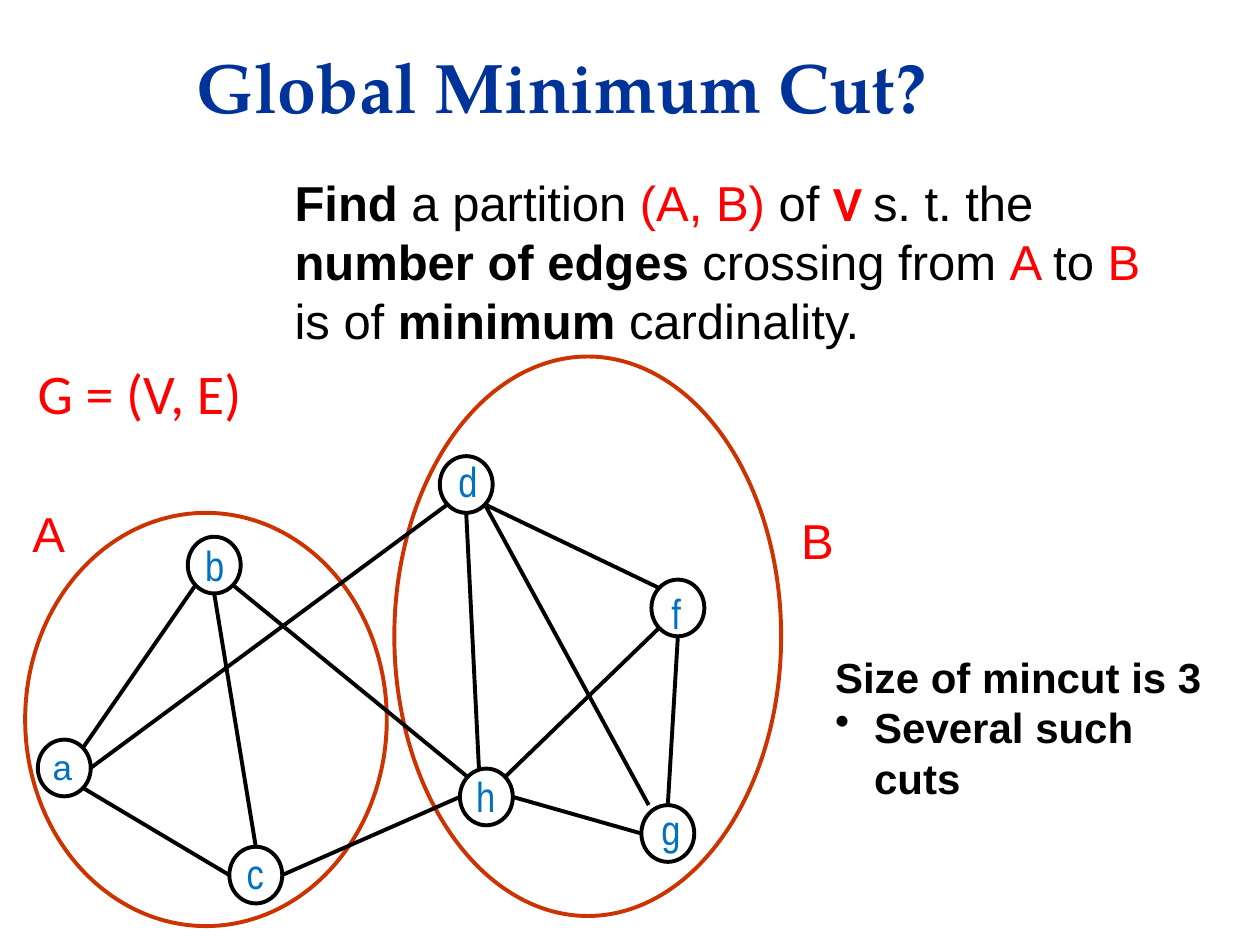
import pptx
import pptx.dml.color
import pptx.enum.shapes
import pptx.enum.text
import pptx.oxml
import pptx.util
from pptx.util import Inches

BLACK, RED, BLUE, NAVY, RUST = "000000", "FF0000", "0070C0", "003399", "CC3300"
NODE_WIDTH, NODE_HEIGHT = 0.42, 0.45

deck = pptx.Presentation()
deck.slide_width, deck.slide_height = Inches(10), Inches(7.5)
slide = deck.slides.add_slide(deck.slide_layouts[6])
shapes = slide.shapes


def color(value):
    return pptx.dml.color.RGBColor.from_string(value)


def add_text(left, top, width, height, paragraphs, **base):
    """Add a text box; each paragraph is a list of (text, format changes) spans."""
    box = shapes.add_textbox(Inches(left), Inches(top), Inches(width), Inches(height))
    frame = box.text_frame
    frame.word_wrap = True
    frame.auto_size = pptx.enum.text.MSO_AUTO_SIZE.SHAPE_TO_FIT_TEXT
    for index, spans in enumerate(paragraphs):
        para = frame.add_paragraph() if index else frame.paragraphs[0]
        for text, changes in spans:
            span = para.add_run()
            span.text = text
            values = {"name": "Arial", "bold": False, "color": BLACK, **base, **changes}
            span.font.color.rgb = color(values.pop("color"))
            values["size"] = pptx.util.Pt(values["size"])
            for attribute, value in values.items():
                setattr(span.font, attribute, value)
    return box


# Graph nodes
nodes = {
    "a": (0.3, 5.87), "b": (1.49, 4.26), "c": (1.82, 6.72), "d": (3.49, 3.62),
    "f": (5.17, 4.6), "g": (5.09, 6.39), "h": (3.65, 6.1),
}
groups = [(0.2, 4.07, 2.87, 3.28), (3.13, 2.83, 3.07, 4.44)]
ovals = [(*corner, NODE_WIDTH, NODE_HEIGHT, BLACK) for corner in nodes.values()]
ovals += [(*group, RUST) for group in groups]
for left, top, width, height, line_color in ovals:
    oval = shapes.add_shape(
        pptx.enum.shapes.MSO_SHAPE.OVAL,
        Inches(left), Inches(top), Inches(width), Inches(height),
    )
    oval.shadow.inherit = False
    oval.fill.background()
    oval.line.color.rgb = color(line_color)
    oval.line.width = pptx.util.Pt(2.25)

# Edges join points on the node outlines, given as fractions of the node size
sites = {
    "top": (0.5, 0), "bottom": (0.5, 1), "left": (0, 0.5), "right": (1, 0.5),
    "top left": (0.15, 0.15), "top right": (0.85, 0.15),
    "bottom left": (0.15, 0.85), "bottom right": (0.85, 0.85),
    "top, left of middle": (0.36, 0), "top, near left": (0.14, 0),
}
edges = [
    ("c", "right", "h", "left"),
    ("c", "top", "b", "bottom"),
    ("c", "left", "a", "bottom right"),
    ("b", "bottom left", "a", "top right"),
    ("d", "bottom left", "a", "right"),
    ("f", "top left", "d", "bottom right"),
    ("f", "bottom left", "h", "top right"),
    ("d", "bottom", "h", "top, left of middle"),
    ("b", "bottom right", "h", "top left"),
    ("g", "left", "h", "right"),
    ("g", "top", "f", "bottom"),
    ("d", "bottom right", "g", "top, near left"),
]
for start, start_site, end, end_site in edges:
    ends = []
    for node, site in ((start, start_site), (end, end_site)):
        ends.append(Inches(nodes[node][0] + sites[site][0] * NODE_WIDTH))
        ends.append(Inches(nodes[node][1] + sites[site][1] * NODE_HEIGHT))
    edge = shapes.add_connector(pptx.enum.shapes.MSO_CONNECTOR.STRAIGHT, *ends)
    edge.line.color.rgb = color(BLACK)
    edge.line.width = pptx.util.Pt(2.25)
    edge._element.spPr.append(
        pptx.oxml.parse_xml(
            '<a:effectLst xmlns:a="http://schemas.openxmlformats.org/drawingml/2006/main"/>'
        )
    )

# Node labels
add_text(0.32, 5.87, 0.42, 0.44, [[("a", {})]], size=20, color=BLUE)
labels = {
    "b": (1.53, 4.23), "c": (1.86, 6.68), "d": (3.54, 3.57),
    "f": (5.23, 4.61), "g": (5.15, 6.33), "h": (3.68, 6.07),
}
for label, (left, top) in labels.items():
    add_text(left, top, 0.38, 0.5, [[(label, {})]],
             size=24, name="Arial Narrow", color=BLUE)

# Title, problem statement and captions
add_text(1.32, 0.3, 7.04, 0.77, [[(" Global Minimum Cut?", {})]],
         size=40, name="TeX Gyre Pagella", bold=True, color=NAVY)
strong, accent = {"bold": True}, {"color": RED}
add_text(2.24, 1.32, 7.13, 1.51, [[
    ("Find ", strong), ("a partition ", {}), ("(A, B) ", accent), ("of ", {}),
    ("V ", {"name": "Calibri", **strong, **accent}), ("s. t. the ", {}),
    ("number of edges ", strong), ("crossing from ", {}), ("A ", accent),
    ("to", {}), (" B ", accent), ("is of ", {}), ("minimum ", strong),
    ("cardinality.", {}),
]], size=28)
add_text(0.2, 2.8, 2.11, 0.64, [[("G = (V, E)", {})]],
         size=32, name="Calibri", color=RED)
add_text(0.16, 3.95, 0.46, 0.57, [[("A", {})]], size=28, color=RED)
add_text(6.26, 4, 0.46, 0.57, [[("B", {})]], size=28, color=RED)
result = add_text(6.53, 5.12, 3.27, 1.31,
                  [[("Size of mincut is 3", {})], [("Several such cuts", {})]],
                  size=24, bold=True)
bullet_properties = result.text_frame.paragraphs[1]._p.get_or_add_pPr()
bullet_properties.set("marL", str(Inches(0.31)))
bullet_properties.set("indent", str(-Inches(0.31)))
bullet_properties.append(
    pptx.oxml.parse_xml(
        '<a:buChar xmlns:a="http://schemas.openxmlformats.org/drawingml/2006/main" char="•"/>'
    )
)

deck.save("out.pptx")
